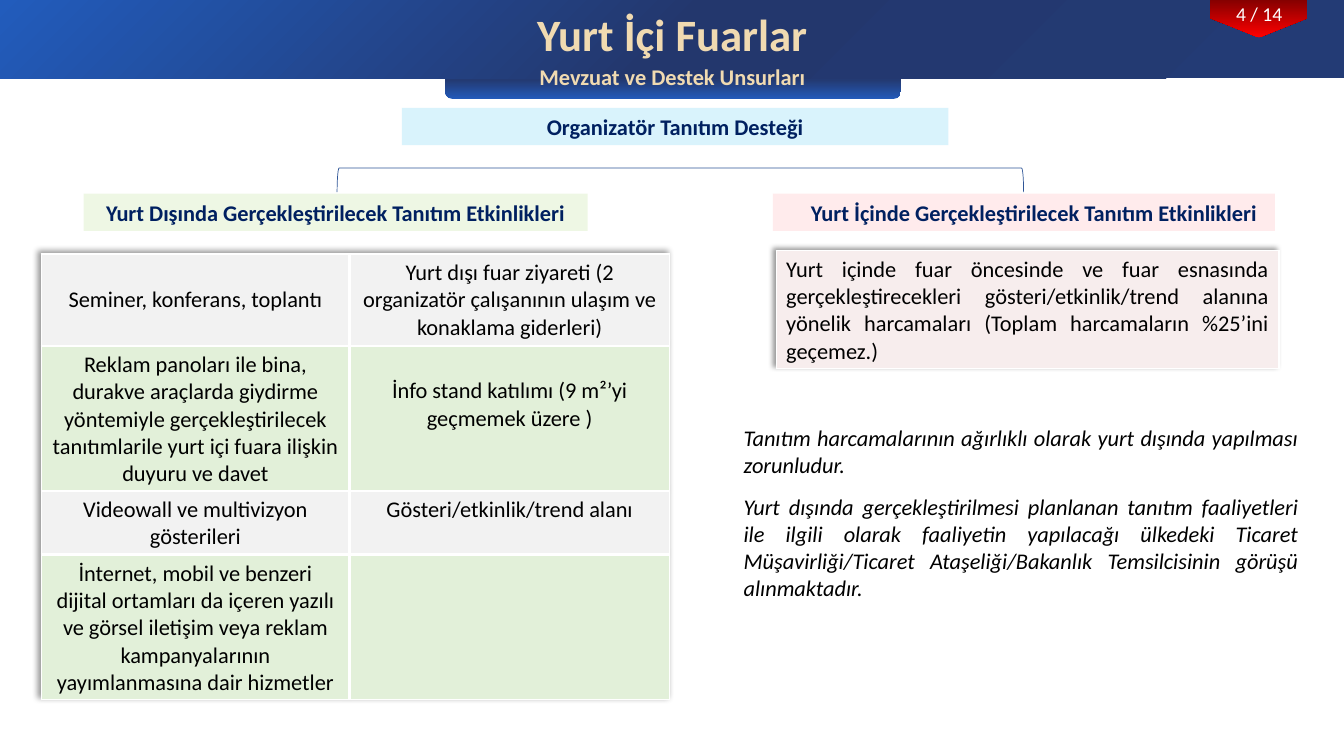
from lxml import etree
from pptx import Presentation
from pptx.dml.color import RGBColor
from pptx.enum.shapes import MSO_SHAPE as Preset
from pptx.enum.text import MSO_ANCHOR as Anchor, PP_ALIGN as Align
from pptx.oxml import parse_xml
from pptx.oxml.ns import nsdecls, qn
from pptx.util import Cm, Pt

NAVY, CREAM, BLACK, WHITE = "002060", "F0DAB1", "000000", "FFFFFF"
GREY, GREEN, ROSE = "F2F2F2", "E2F0D9", "F7EDED"


def rgb(value):
    return RGBColor.from_string(value)


def write(frame, text, size=16, color=BLACK, bold=False, italic=False,
          align=Align.CENTER, gap=0):
    """Fill a text frame; each line of text is a paragraph."""
    frame.text = text
    for number, paragraph in enumerate(frame.paragraphs):
        paragraph.alignment = align
        if number:
            paragraph.space_before = Pt(gap)
        for run in paragraph.runs:
            font = run.font
            font.name, font.size = "Calibri", Pt(size)
            font.bold, font.italic = bold, italic
            font.color.rgb = rgb(color)


def gradient(stops, angle):
    marks = "".join(f'<a:gs pos="{pos * 1000}"><a:srgbClr val="{color}"/></a:gs>'
                    for pos, color in stops)
    return parse_xml(f'<a:gradFill {nsdecls("a")} rotWithShape="1"><a:gsLst>{marks}'
                     f'</a:gsLst><a:lin ang="{angle * 60000}" scaled="0"/></a:gradFill>')


def border(cell, widths):
    """Draw white borders, widths in points for left, right, top, bottom."""
    props = cell._tc.get_or_add_tcPr()
    for index, (side, width) in enumerate(zip(("lnL", "lnR", "lnT", "lnB"), widths)):
        props.insert(index, parse_xml(
            f'<a:{side} {nsdecls("a")} w="{Pt(width)}"><a:solidFill>'
            f'<a:srgbClr val="{WHITE}"/></a:solidFill></a:{side}>'))


class FairSlide:
    def __init__(self, deck):
        self.slide = deck.slides.add_slide(deck.slide_layouts[5])
        self.shapes = self.slide.shapes

    def shape(self, preset, box, rotation=0):
        shape = self.shapes.add_shape(preset, *map(Cm, box))
        shape.rotation = rotation
        shape.shadow.inherit = False
        shape.fill.background()
        shape.line.fill.background()
        return shape

    def gradient_shape(self, preset, box, stops, angle, rotation=0):
        props = self.shape(preset, box, rotation)._element.spPr
        props.replace(props.find(qn("a:noFill")), gradient(stops, angle))

    def title(self, text, box, **style):
        title = self.shapes.title
        title.left, title.top, title.width, title.height = map(Cm, box)
        title.text_frame.vertical_anchor = Anchor.TOP
        write(title.text_frame, text, **style)
        self.shapes._spTree.append(title._element)  # in front of the banner

    def text(self, text, box, **style):
        frame = self.shapes.add_textbox(*map(Cm, box)).text_frame
        frame.word_wrap = True
        write(frame, text, **style)

    def heading(self, text, box, tint, indent=0.25):
        heading = self.shape(Preset.RECTANGLE, box)
        heading.fill.solid()
        heading.fill.fore_color.rgb = rgb(tint)
        color = heading._element.spPr.find(qn("a:solidFill"))[0]
        etree.SubElement(color, qn("a:alpha"), val="15000")
        heading.text_frame.margin_left = Cm(indent)
        heading.text_frame.word_wrap = True
        write(heading.text_frame, text, color=NAVY, bold=True)

    def bracket(self, box, color):
        bracket = self.shape(Preset.LEFT_BRACKET, box, 90)
        bracket.line.color.rgb = rgb(color)
        bracket.line.width = Pt(0.5)

    def table(self, rows, corner, widths, heights, fills, anchor, **style):
        frame = self.shapes.add_table(len(rows), len(widths), *map(Cm, corner),
                                      Cm(sum(widths)), Cm(sum(heights)))
        table = frame.table
        table.first_row = table.horz_banding = False
        table._tbl.tblPr.insert(0, parse_xml(
            f'<a:effectLst {nsdecls("a")}><a:outerShdw blurRad="50800" dist="38100" '
            'dir="13500000" algn="br" rotWithShape="0"><a:srgbClr val="000000">'
            '<a:alpha val="40000"/></a:srgbClr></a:outerShdw></a:effectLst>'))
        for column, width in zip(table.columns, widths):
            column.width = Cm(width)
        last_row, last_column = len(rows) - 1, len(widths) - 1
        for r, row in enumerate(rows):
            table.rows[r].height = Cm(heights[r])
            for c, text in enumerate(row):
                cell = table.cell(r, c)
                cell.fill.solid()
                cell.fill.fore_color.rgb = rgb(fills[r % len(fills)])
                cell.vertical_anchor = anchor
                outer = (c == 0, c == last_column, r == 0, r == last_row)
                border(cell, [1 if edge else 2.25 for edge in outer])
                write(cell.text_frame, text, **style)
        return table


def main():
    deck = Presentation()
    deck.slide_width, deck.slide_height = Cm(33.87), Cm(19.05)
    fair = FairSlide(deck)

    fair.gradient_shape(Preset.ROUND_2_SAME_RECTANGLE, (11.22, 1.45, 11.48, 1.04),
                        [(0, "225AB9"), (45, "233A73")], 90, 180)
    fair.gradient_shape(Preset.RECTANGLE, (0, 0, 33.87, 1.98),
                        [(0, "233B75"), (50, "23376D"), (100, "225CBC")], 225)
    fair.gradient_shape(Preset.PENTAGON, (31.24, -0.76, 0.97, 2.44),
                        [(0, "820000"), (100, "FF0000")], 0, 90)
    fair.text("4 / 14", (30.25, -0.08, 2.97, 0.86), size=14, color=WHITE)
    fair.title("Yurt İçi Fuarlar", (7.57, 0.03, 18.75, 1.63),
               size=32, color=CREAM, bold=True)
    fair.text("Mevzuat ve Destek Unsurları", (12.12, 1.47, 9.65, 0.94),
              color=CREAM, bold=True)

    fair.heading("Organizatör Tanıtım Desteği", (10.13, 2.72, 13.77, 0.94), "00B0F0")
    fair.bracket((16.84, -4.11, 0.61, 17.3), "2F5597")
    fair.heading("Yurt Dışında Gerçekleştirilecek Tanıtım Etkinlikleri",
                 (2.11, 4.88, 12.7, 0.94), "92D050")
    fair.heading("Yurt İçinde Gerçekleştirilecek Tanıtım Etkinlikleri",
                 (19.48, 4.88, 12.65, 0.94), "FF7C80", indent=0.76)

    abroad = fair.table(
        [("Seminer, konferans, toplantı",
          "Yurt dışı fuar ziyareti (2 organizatör çalışanının ulaşım ve "
          "konaklama giderleri)"),
         ("Reklam panoları ile bina,\vdurakve araçlarda giydirme\vyöntemiyle "
          "gerçekleştirilecek tanıtımlarile yurt içi fuara ilişkin duyuru ve davet",
          "İnfo stand katılımı (9 m²’yi geçmemek üzere )"),
         ("Videowall ve multivizyon gösterileri", "Gösteri/etkinlik/trend alanı"),
         ("İnternet, mobil ve benzeri dijital ortamları da içeren yazılı ve görsel "
          "iletişim veya reklam kampanyalarının yayımlanmasına dair hizmetler", "")],
        (1.04, 6.4), (7.77, 8.07), (2.32, 3.65, 1.6, 3.65), (GREY, GREEN),
        Anchor.MIDDLE)
    abroad.cell(1, 1).margin_bottom = Cm(0.82)
    abroad.cell(2, 1).vertical_anchor = Anchor.TOP

    fair.table(
        [("Yurt içinde fuar öncesinde ve fuar esnasında gerçekleştirecekleri "
          "gösteri/etkinlik/trend alanına yönelik harcamaları (Toplam harcamaların "
          "%25’ini geçemez.)",)],
        (19.56, 6.32), (12.67,), (2.97,), (ROSE,), Anchor.TOP, align=Align.JUSTIFY)

    fair.text("Tanıtım harcamalarının ağırlıklı olarak yurt dışında yapılması "
              "zorunludur.\nYurt dışında gerçekleştirilmesi planlanan tanıtım "
              "faaliyetleri ile ilgili olarak faaliyetin yapılacağı ülkedeki Ticaret "
              "Müşavirliği/Ticaret Ataşeliği/Bakanlık Temsilcisinin görüşü "
              "alınmaktadır.",
              (18.49, 10.57, 14.48, 5.51), italic=True, align=Align.JUSTIFY, gap=11)

    deck.save("out.pptx")


if __name__ == "__main__":
    main()
